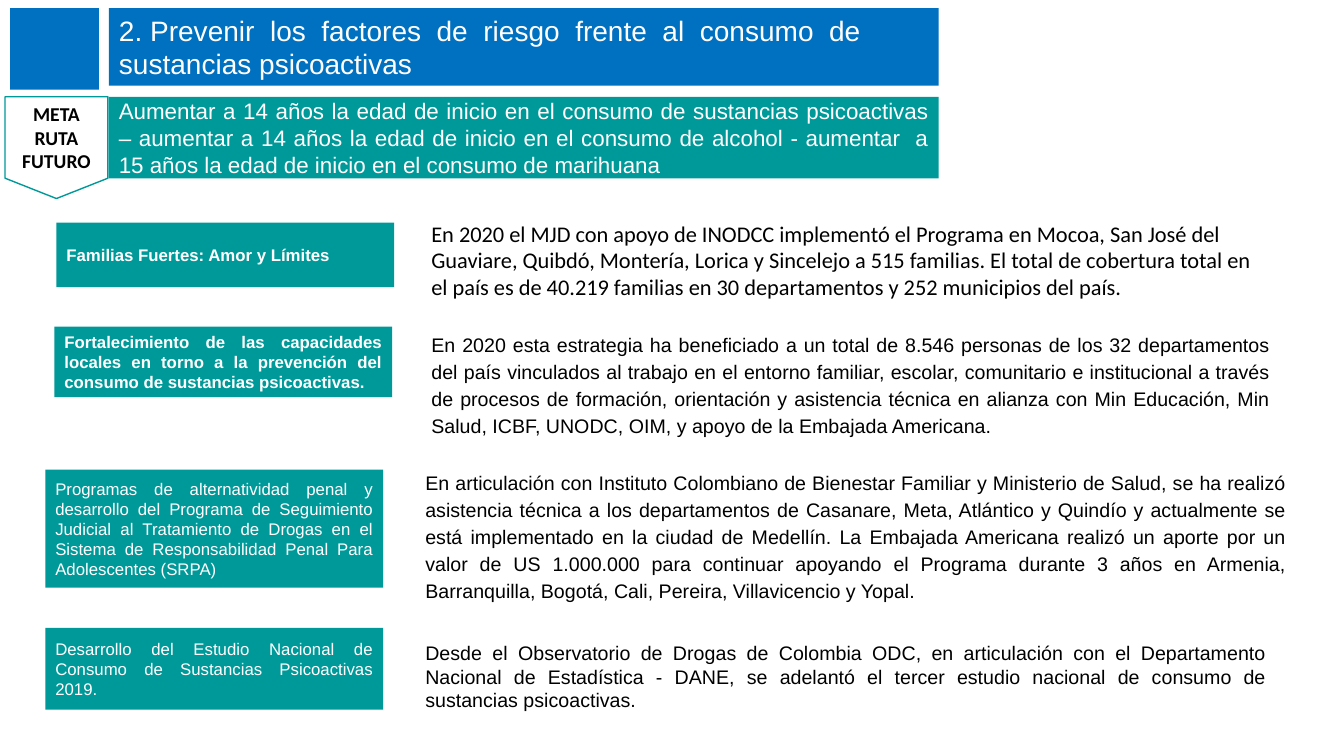
from pptx import Presentation
from pptx.dml.color import RGBColor
from pptx.enum.shapes import MSO_SHAPE as Preset
from pptx.enum.text import MSO_ANCHOR as Anchor, MSO_AUTO_SIZE as AutoSize, PP_ALIGN as Align
from pptx.util import Inches, Pt

BLUE, TEAL, WHITE, BLACK = "0070C0", "009999", "FFFFFF", "000000"

TITLE = ("2. Prevenir  los  factores  de  riesgo  frente  al  consumo  de  "
         "sustancias psicoactivas")
GOAL = ("Aumentar a 14 años la edad de inicio en el consumo de sustancias psicoactivas – "
        "aumentar a 14 años la edad de inicio en el consumo de alcohol - aumentar  a 15 años "
        "la edad de inicio en el consumo de marihuana")

PROGRAMMES = [
    ("Familias Fuertes: Amor y Límites", (0.56, 2.21, 3.35, 0.64), dict(bold=True),
     "En 2020 el MJD con apoyo de INODCC implementó el Programa en Mocoa, San José del "
     "Guaviare, Quibdó, Montería, Lorica y Sincelejo a 515 familias. El total de cobertura "
     "total en el país es de 40.219 familias en 30 departamentos y 252 municipios del país.",
     (4.18, 2.13, 8.52, 0.91), dict(size=16, font="Calibri", align=Align.LEFT)),
    ("Fortalecimiento de las capacidades locales en torno a la prevención del consumo de "
     "sustancias psicoactivas.", (0.54, 3.24, 3.35, 0.7), dict(bold=True),
     "En 2020 esta estrategia ha beneficiado a un total de 8.546 personas de los 32 "
     "departamentos del país vinculados al trabajo en el entorno familiar, escolar, "
     "comunitario e institucional a través de procesos de formación, orientación y "
     "asistencia técnica en alianza con Min Educación, Min Salud, ICBF, UNODC, OIM, y apoyo "
     "de la Embajada Americana.",
     (4.18, 3.22, 8.52, 1.18), dict(line_spacing=1.15, space_after=8)),
    ("Programas de alternatividad penal y desarrollo del Programa de Seguimiento Judicial al "
     "Tratamiento de Drogas en el Sistema de Responsabilidad Penal Para Adolescentes (SRPA)",
     (0.45, 4.66, 3.35, 1.17), {},
     "En articulación con Instituto Colombiano de Bienestar Familiar y Ministerio de Salud, "
     "se ha realizó asistencia técnica a los departamentos de Casanare, Meta, Atlántico y "
     "Quindío y actualmente se está implementado en la ciudad de Medellín. La Embajada "
     "Americana realizó un aporte por un valor de US 1.000.000 para continuar apoyando el "
     "Programa durante 3 años en Armenia, Barranquilla, Bogotá, Cali, Pereira, Villavicencio "
     "y Yopal.",
     (4.12, 4.59, 8.74, 1.73), dict(line_spacing=1.15)),
    ("Desarrollo del Estudio Nacional de Consumo de Sustancias Psicoactivas 2019.",
     (0.45, 6.23, 3.35, 0.81), {},
     "Desde el Observatorio de Drogas de Colombia ODC, en articulación con el Departamento "
     "Nacional de Estadística - DANE, se adelantó el tercer estudio nacional de consumo de "
     "sustancias psicoactivas.",
     (4.12, 6.31, 8.54, 0.81), {}),
]


def rgb(color):
    return RGBColor.from_string(color)


def paint(shape, color):
    shape.fill.solid()
    shape.fill.fore_color.rgb = rgb(color)


def write(shape, text, size=14, font="Arial", color=BLACK, bold=False, align=Align.JUSTIFY,
          anchor=Anchor.TOP, line_spacing=1.0, space_after=0):
    frame = shape.text_frame
    frame.word_wrap = True
    frame.auto_size = AutoSize.NONE
    frame.vertical_anchor = anchor
    paragraph = frame.paragraphs[0]
    paragraph.text = text
    paragraph.alignment = align
    paragraph.line_spacing = line_spacing
    paragraph.space_before = Pt(0)
    paragraph.space_after = Pt(space_after)
    paragraph.font.size = Pt(size)
    paragraph.font.name = font
    paragraph.font.bold = bold
    paragraph.font.color.rgb = rgb(color)


def add_title(slide, text, place):
    title = slide.shapes.title
    title.left, title.top, title.width, title.height = map(Inches, place)
    paint(title, BLUE)
    write(title, text, size=20, color=WHITE, align=Align.LEFT, anchor=Anchor.MIDDLE)


def add_block(slide, place, fill, preset=Preset.RECTANGLE, line=None):
    shape = slide.shapes.add_shape(preset, *map(Inches, place))
    shape.shadow.inherit = False
    paint(shape, fill)
    if line:
        shape.line.color.rgb = rgb(line)
        shape.line.width = Pt(1)
    else:
        shape.line.fill.background()
    return shape


def add_label(slide, text, place, size=12, **text_format):
    label = add_block(slide, place, TEAL)
    write(label, text, size=size, color=WHITE, anchor=Anchor.MIDDLE, **text_format)


def add_description(slide, text, place, **text_format):
    write(slide.shapes.add_textbox(*map(Inches, place)), text, **text_format)


def main():
    presentation = Presentation()
    presentation.slide_width = Inches(13.33)
    presentation.slide_height = Inches(7.5)
    slide = presentation.slides.add_slide(presentation.slide_layouts[5])

    add_title(slide, TITLE, (1.08, 0.08, 8.23, 0.77))
    add_label(slide, GOAL, (1.08, 0.96, 8.23, 0.81), size=16)
    goal_tag = add_block(slide, (0.05, 0.96, 1.02, 1.01), WHITE,
                         Preset.FLOWCHART_OFFPAGE_CONNECTOR, line=TEAL)
    write(goal_tag, "META RUTA FUTURO", font="Calibri", bold=True, align=Align.CENTER,
          anchor=Anchor.MIDDLE)
    add_block(slide, (0.1, 0.08, 0.88, 0.81), BLUE)

    for name, name_place, name_format, detail, detail_place, detail_format in PROGRAMMES:
        add_label(slide, name, name_place, **name_format)
        add_description(slide, detail, detail_place, **detail_format)

    presentation.save("out.pptx")


if __name__ == "__main__":
    main()
